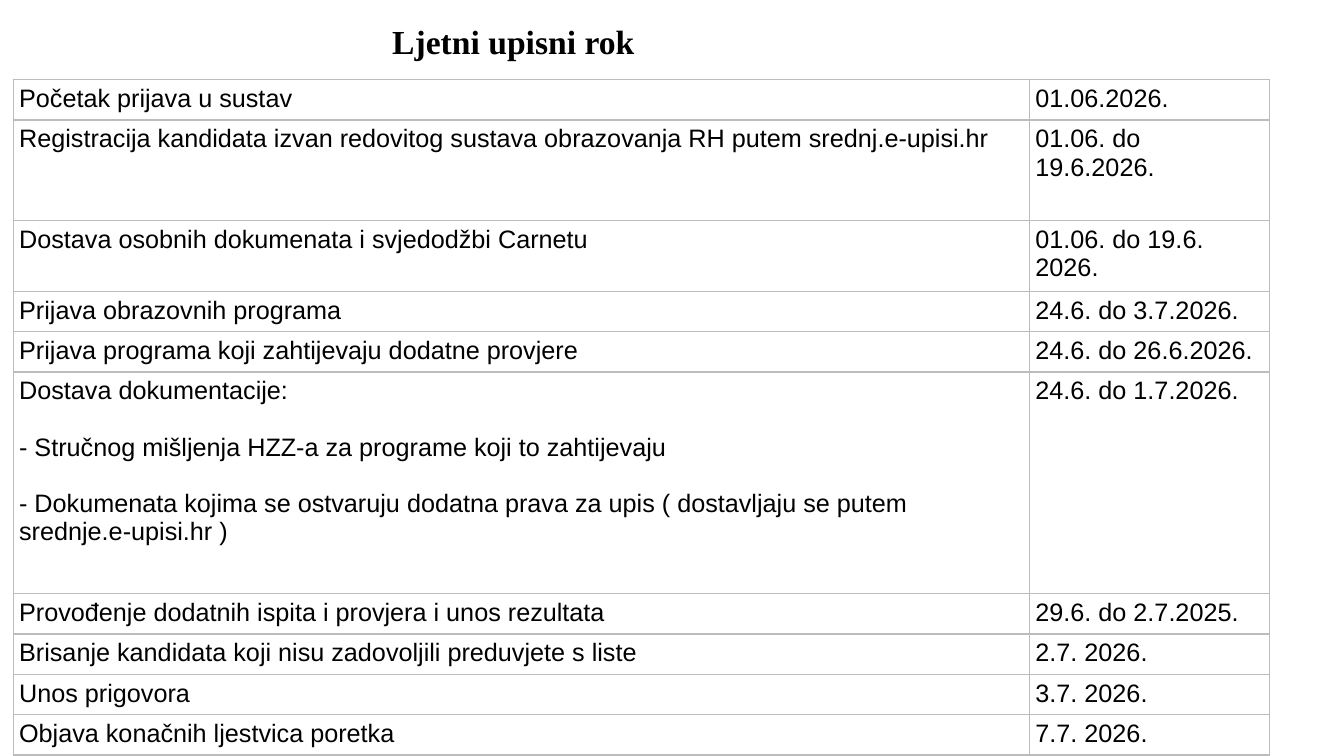
from lxml.etree import SubElement
from pptx import Presentation
from pptx.dml.color import RGBColor
from pptx.enum.text import MSO_ANCHOR as Anchor, MSO_AUTO_SIZE as AutoSize, PP_ALIGN as Align
from pptx.oxml.ns import qn
from pptx.util import Inches, Pt

BLACK, GRID = "000000", "BCBCBC"
COLUMN_WIDTHS = (10.08, 2.38)
ROW_HEIGHT = 0.4
# Each entry: paragraphs of the step, its dates, and the row height
DEADLINES = [
    (["Početak prijava u sustav"], "01.06.2026.", ROW_HEIGHT),
    (["Registracija kandidata izvan redovitog sustava obrazovanja RH putem srednj.e-upisi.hr"],
     "01.06. do 19.6.2026.", 1),
    (["Dostava osobnih dokumenata i svjedodžbi Carnetu"], "01.06. do 19.6. 2026.", 0.7),
    (["Prijava obrazovnih programa"], "24.6. do 3.7.2026.", ROW_HEIGHT),
    (["Prijava programa koji zahtijevaju dodatne provjere"], "24.6. do 26.6.2026.", ROW_HEIGHT),
    (["Dostava dokumentacije:",
      "- Stručnog mišljenja HZZ-a za programe koji to zahtijevaju",
      "- Dokumenata kojima se ostvaruju dodatna prava za upis ( dostavljaju se putem "
      "srednje.e-upisi.hr )"], "24.6. do 1.7.2026.", 2.2),
    (["Provođenje dodatnih ispita i provjera i unos rezultata"], "29.6. do 2.7.2025.", ROW_HEIGHT),
    (["Brisanje kandidata koji nisu zadovoljili preduvjete s liste"], "2.7. 2026.", ROW_HEIGHT),
    (["Unos prigovora"], "3.7. 2026.", ROW_HEIGHT),
    (["Objava konačnih ljestvica poretka"], "7.7. 2026.", ROW_HEIGHT),
]


def color(value):
    return RGBColor.from_string(value)


def write(frame, paragraphs, size=18, font="Arial", bold=False, gap=0, line_spacing=None):
    for index, text in enumerate(paragraphs):
        paragraph = frame.add_paragraph() if index else frame.paragraphs[0]
        paragraph.text = text
        paragraph.alignment = Align.LEFT
        paragraph.space_before = Pt(gap if index else 0)
        if line_spacing:
            paragraph.line_spacing = line_spacing
        paragraph.font.size = Pt(size)
        paragraph.font.name = font
        paragraph.font.bold = bold
        paragraph.font.color.rgb = color(BLACK)


def add_borders(cell):
    properties = cell._tc.get_or_add_tcPr()
    for position, side in enumerate(("lnL", "lnR", "lnT", "lnB")):
        line = SubElement(properties, qn(f"a:{side}"), w=str(Pt(0.96)))
        fill = SubElement(line, qn("a:solidFill"))
        SubElement(fill, qn("a:srgbClr"), val=GRID)
        properties.insert(position, line)


def add_title(slide, left, top, width, height):
    title = slide.shapes.title
    title.left, title.top = Inches(left), Inches(top)
    title.width, title.height = Inches(width), Inches(height)
    frame = title.text_frame
    frame.word_wrap = True
    frame.auto_size = AutoSize.NONE
    frame.margin_left, frame.margin_right = Inches(0.09), 0
    frame.vertical_anchor = Anchor.TOP
    write(frame, ["Ljetni upisni rok"], size=24, font="Times New Roman", bold=True,
          line_spacing=1.07)


def fill_cell(cell, paragraphs):
    cell.margin_left = cell.margin_right = Inches(0.06)
    cell.margin_top = cell.margin_bottom = Inches(0.05)
    cell.fill.background()
    add_borders(cell)
    write(cell.text_frame, paragraphs, gap=20)


def add_deadlines(slide, left, top):
    height = sum(row_height for _, _, row_height in DEADLINES)
    table = slide.shapes.add_table(
        len(DEADLINES), len(COLUMN_WIDTHS), Inches(left), Inches(top),
        Inches(sum(COLUMN_WIDTHS)), Inches(height)).table
    table.first_row = table.horz_banding = False
    for column, width in zip(table.columns, COLUMN_WIDTHS):
        column.width = Inches(width)
    for index, (step, dates, row_height) in enumerate(DEADLINES):
        table.rows[index].height = Inches(row_height)
        fill_cell(table.cell(index, 0), step)
        fill_cell(table.cell(index, 1), [dates])


def main():
    deck = Presentation()
    deck.slide_width, deck.slide_height = Inches(13.33), Inches(7.5)
    slide = deck.slides.add_slide(deck.slide_layouts[5])
    add_title(slide, 3.8, 0.13, 2.7, 0.53)
    add_deadlines(slide, 0.13, 0.79)
    deck.save("out.pptx")


if __name__ == "__main__":
    main()
